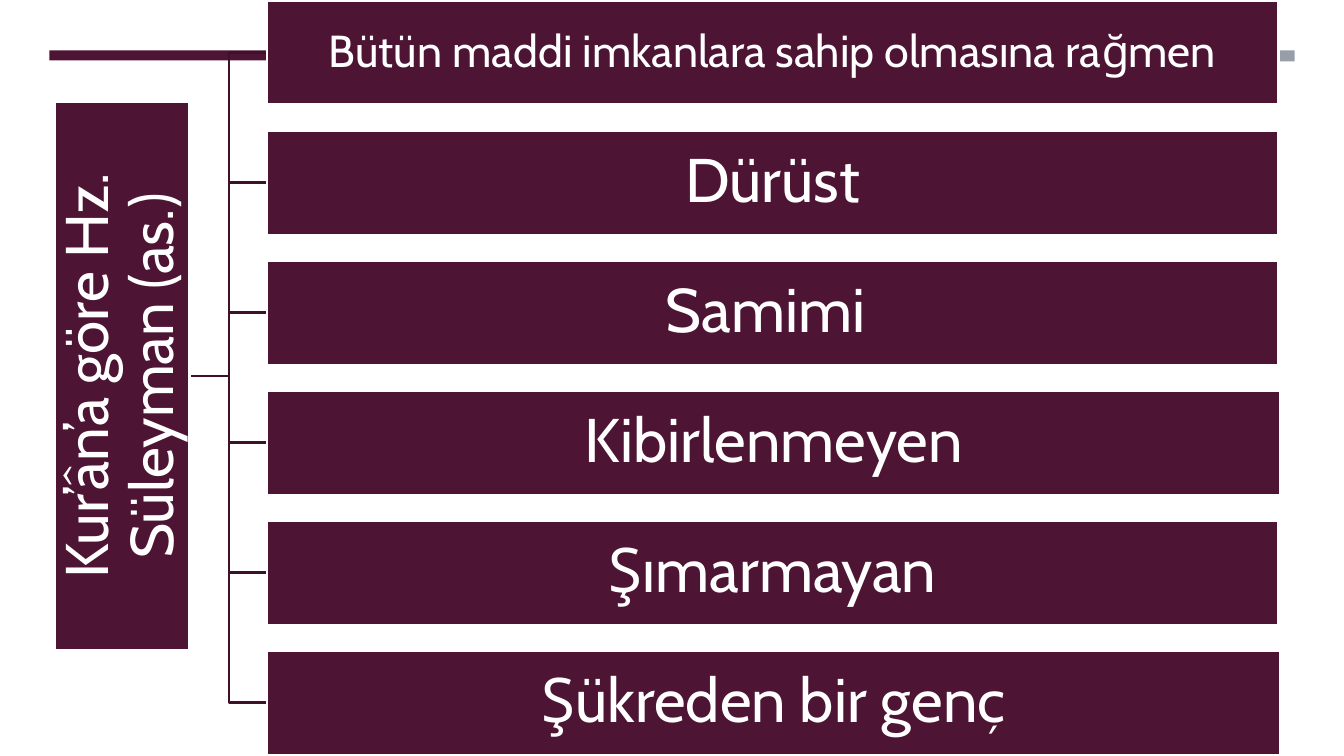
from dataclasses import dataclass

from pptx import Presentation
from pptx.dml.color import RGBColor
from pptx.enum.shapes import MSO_SHAPE
from pptx.enum.text import MSO_ANCHOR, PP_ALIGN
from pptx.shapes.autoshape import Shape
from pptx.slide import Slide
from pptx.util import Pt

PX = 9144
RECT = MSO_SHAPE.RECTANGLE
MIDDLE = MSO_ANCHOR.MIDDLE
CENTER = PP_ALIGN.CENTER
PLUM = RGBColor(0x4D, 0x14, 0x34)
DARK = RGBColor(0x3E, 0x10, 0x2A)
GRAY = RGBColor(0x96, 0x9F, 0xA7)
WHITE = RGBColor(0xFF, 0xFF, 0xFF)
FONT = "Cabin"
LINE = Pt(1.75)

ROOT_X, ROOT_Y = 188, 373
STEM_X = 227
ROW_X, ROW_Y = 265, 1
ROW_H, STEP = 103, 129


@dataclass(frozen=True)
class Trait:
    text: str
    width: int = 1003
    size: int = 44
    inset: int = 3


TRAITS = [
    Trait("Bütün maddi imkanlara sahip olmasına rağmen", size=32, inset=2),
    Trait("Dürüst"),
    Trait("Samimi "),
    Trait("Kibirlenmeyen", width=1005),
    Trait("Şımarmayan"),
    Trait("Şükreden bir genç", width=1005),
]


def add_bar(slide: Slide, x: int, y: int, w: int, h: int, color: RGBColor) -> Shape:
    bar = slide.shapes.add_shape(RECT, x * PX, y * PX, w * PX, h * PX)
    bar.shadow.inherit = False
    bar.fill.solid()
    bar.fill.fore_color.rgb = color
    bar.line.fill.background()
    return bar


def add_box(slide: Slide, x: int, y: int, h: int, trait: Trait) -> Shape:
    box = add_bar(slide, x, y, trait.width, h, PLUM)
    box.line.color.rgb = WHITE
    box.line.width = LINE
    frame = box.text_frame
    frame.word_wrap = True
    frame.vertical_anchor = MIDDLE
    inset = trait.inset * PX
    frame.margin_left = frame.margin_right = inset
    frame.margin_top = frame.margin_bottom = inset
    para = frame.paragraphs[0]
    para.alignment = CENTER
    para.line_spacing = 0.9
    run = para.add_run()
    run.text = trait.text
    run.font.name = FONT
    run.font.size = Pt(trait.size)
    run.font.color.rgb = WHITE
    return box


def add_branch(slide: Slide, end_y: int) -> None:
    pen = slide.shapes.build_freeform(ROOT_X, ROOT_Y, scale=PX)
    pen.add_line_segments(
        [(STEM_X, ROOT_Y), (STEM_X, end_y), (ROW_X, end_y)], close=False
    )
    branch = pen.convert_to_shape()
    branch.shadow.inherit = False
    branch.fill.background()
    branch.line.color.rgb = DARK
    branch.line.width = LINE


def main() -> None:
    deck = Presentation()
    deck.slide_width, deck.slide_height = 1333 * PX, 750 * PX
    slide = deck.slides.add_slide(deck.slide_layouts[6])

    add_bar(slide, 49, 50, 405, 10, PLUM)
    add_bar(slide, 879, 50, 405, 11, GRAY)

    tops = [ROW_Y + STEP * i for i in range(len(TRAITS))]
    for top in reversed(tops):
        add_branch(slide, top + ROW_H // 2)

    title = Trait("Kur’ân’a göre Hz. Süleyman (as.)", width=544, size=43)
    add_box(slide, -151, 306, 134, title).rotation = 270
    for top, trait in zip(tops, TRAITS):
        add_box(slide, ROW_X, top, ROW_H, trait)

    deck.save("out.pptx")


if __name__ == "__main__":
    main()
